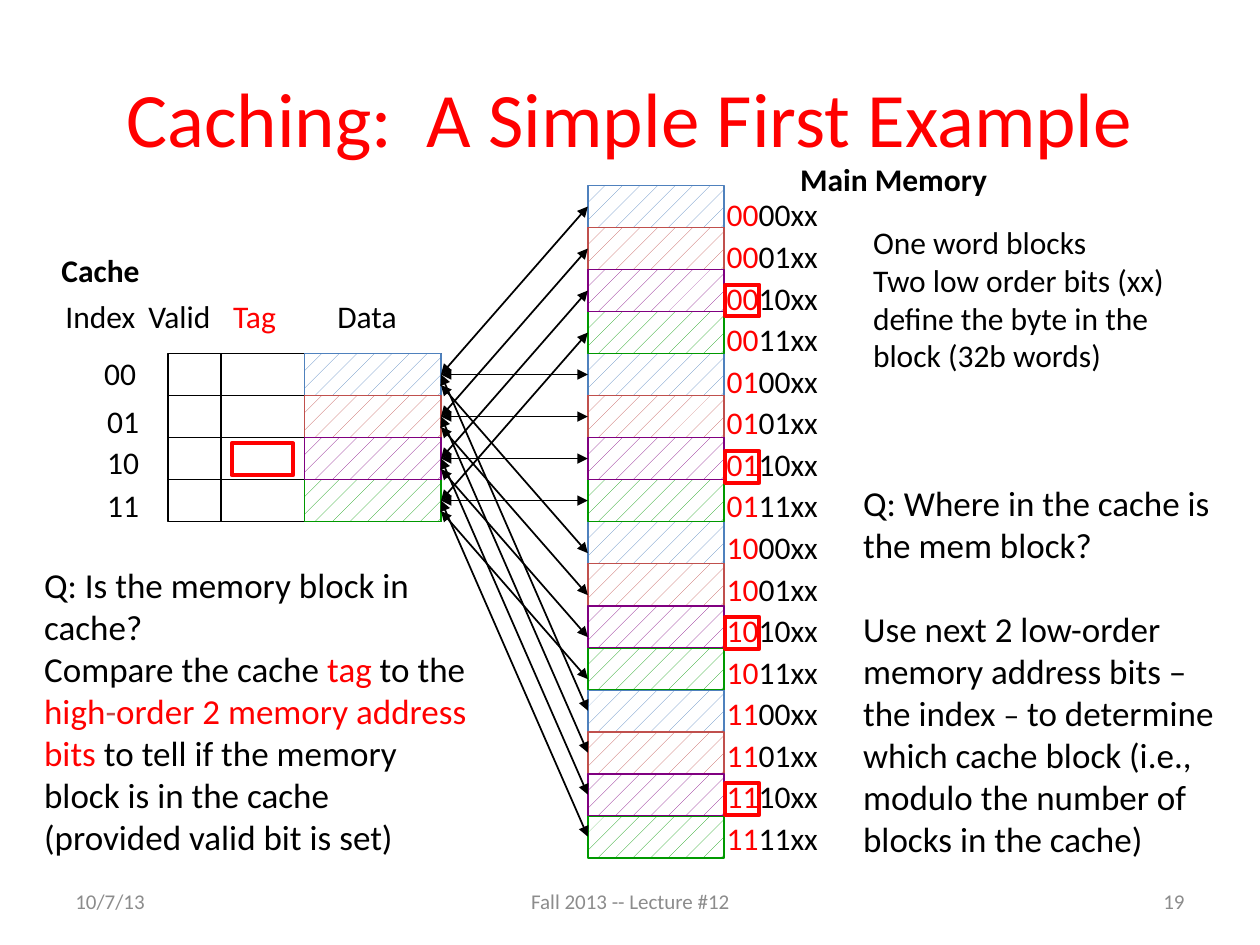
from dataclasses import dataclass
from itertools import product
from typing import Any

from lxml.etree import SubElement
from pptx import Presentation
from pptx.dml.color import RGBColor
from pptx.enum.dml import MSO_PATTERN
from pptx.enum.shapes import MSO_CONNECTOR, MSO_SHAPE
from pptx.enum.text import MSO_ANCHOR, MSO_AUTO_SIZE, PP_ALIGN
from pptx.oxml.ns import qn
from pptx.util import Cm, Pt


@dataclass(frozen=True)
class Theme:
    font: str = "Calibri"
    black: str = "000000"
    white: str = "FFFFFF"
    red: str = "FF0000"
    grey: str = "8C8C8C"
    brick: str = "C0504D"
    blocks: tuple[str, ...] = ("4F81BD", "C0504D", "800080", "009900")
    title: float = 44
    question: float = 20
    label: float = 18
    footer: float = 12
    rule: float = 1
    frame: float = 2.25


THEME = Theme()


@dataclass(frozen=True)
class Span:
    text: str
    color: str = THEME.black
    size: float = THEME.label
    bold: bool = False


@dataclass(frozen=True)
class Label:
    left: float
    top: float
    width: float
    span: Span
    height: float = 1.02


@dataclass(frozen=True)
class Column:
    left: float
    top: float
    width: float
    rows: int

    def row_top(self, row: float) -> float:
        return self.top + row * ROW

    @property
    def right(self) -> float:
        return self.left + self.width


ROW = 13.55 / 16
MEMORY = Column(11.85, 3.74, 2.75, 16)
CACHE_TOP = MEMORY.row_top(4)
VALID = Column(3.39, CACHE_TOP, 1.06, 4)
TAG = Column(4.45, CACHE_TOP, 1.69, 4)
DATA = Column(6.14, CACHE_TOP, 2.75, 4)
BITS = ["".join(pair) for pair in product("01", repeat=2)]


def set_format(target: Any, values: dict[str, Any]) -> None:
    for name, value in values.items():
        setattr(target, name, value)


def write_span(para: Any, span: Span) -> None:
    if span.text == "\n":
        para.add_line_break()
        return
    run = para.add_run()
    run.text = span.text
    set_format(run.font, {"name": THEME.font, "size": Pt(span.size), "bold": span.bold})
    run.font.color.rgb = RGBColor.from_string(span.color)


def add_text(page: Any, place: tuple[float, ...], paragraphs: list[list[Span]],
             para_format: dict[str, Any], frame_format: dict[str, Any]) -> Any:
    box = page.shapes.add_textbox(*map(Cm, place))
    frame = box.text_frame
    set_format(frame, {"word_wrap": True, "auto_size": MSO_AUTO_SIZE.SHAPE_TO_FIT_TEXT, **frame_format})
    for number, spans in enumerate(paragraphs):
        para = frame.add_paragraph() if number else frame.paragraphs[0]
        set_format(para, para_format)
        for span in spans:
            write_span(para, span)
    return box


def add_label(page: Any, label: Label) -> None:
    add_text(page, (label.left, label.top, label.width, label.height), [[label.span]], {}, {"word_wrap": False})


def add_rectangle(page: Any, place: tuple[float, ...], color: str, weight: float) -> Any:
    box = page.shapes.add_shape(MSO_SHAPE.RECTANGLE, *map(Cm, place))
    box.shadow.inherit = False
    box.fill.background()
    box.line.color.rgb = RGBColor.from_string(color)
    box.line.width = Pt(weight)
    return box


def add_line(page: Any, left: float, top: float, right: float, bottom: float) -> Any:
    line = page.shapes.add_connector(MSO_CONNECTOR.STRAIGHT, *map(Cm, (left, top, right, bottom)))
    line.line.color.rgb = RGBColor.from_string(THEME.black)
    line.line.width = Pt(THEME.rule)
    SubElement(line._element.spPr, qn("a:effectLst"))
    return line


def add_arrow(page: Any, left: float, top: float, right: float, bottom: float) -> Any:
    arrow = add_line(page, left, top, right, bottom)
    outline = arrow.line._get_or_add_ln()
    for end in ("a:headEnd", "a:tailEnd"):
        SubElement(outline, qn(end)).set("type", "triangle")
    return arrow


def add_rules(page: Any, column: Column, first: int, last: int) -> None:
    for row in range(first, last):
        add_line(page, column.left, column.row_top(row), column.right, column.row_top(row))


def add_block(page: Any, column: Column, row: int) -> Any:
    color = THEME.blocks[row % 4]
    block = add_rectangle(page, (column.left, column.row_top(row), column.width, ROW), color, THEME.rule)
    block.fill.patterned()
    block.fill.pattern = MSO_PATTERN.PERCENT_5
    block.fill.fore_color.rgb = RGBColor.from_string(color)
    block.fill.back_color.rgb = RGBColor.from_string(THEME.white)
    return block


def add_blocks(page: Any, column: Column) -> dict[int, Any]:
    order = sorted(range(column.rows), key=lambda row: (0, 3, 1, 2).index(row % 4))
    return {row: add_block(page, column, row) for row in order}


def add_grids(page: Any) -> None:
    for column in (DATA, TAG, VALID):
        add_rectangle(page, (column.left, column.top, column.width, column.rows * ROW), THEME.black, THEME.rule)
        add_rules(page, column, 1, column.rows)
    add_rules(page, MEMORY, 0, MEMORY.rows + 1)
    for side in (MEMORY.left, MEMORY.right):
        add_line(page, side, MEMORY.top, side, MEMORY.row_top(MEMORY.rows))


def add_mapping(page: Any, memory_blocks: dict[int, Any], cache_blocks: dict[int, Any]) -> None:
    for row in range(MEMORY.rows):
        shift = 0.75 if row // 4 == 2 else 0.5
        arrow = add_arrow(page, MEMORY.left, MEMORY.row_top(row + shift), DATA.right, DATA.row_top(row % 4 + shift))
        if shift == 0.5:
            arrow.begin_connect(memory_blocks[row], 1)
            arrow.end_connect(cache_blocks[row % 4], 3)


def add_notes_text(page: Any) -> None:
    def ask(text: str, color: str = THEME.black) -> Span:
        return Span(text, color, THEME.question)

    where = add_text(page, (17.15, 9.58, 7.62, 7.95), [
        [ask("Q: Where in the cache is the mem block?")],
        [ask("Use next 2 low-order memory address bits – the index "), Span("–"),
         ask(" to determine which cache block (i.e., modulo the number of blocks in the cache)")],
    ], {}, {})
    where.text_frame.paragraphs[1].space_before = Pt(24)
    add_text(page, (0.64, 11.23, 9.12, 6.25), [
        [ask("Q: Is the memory block in cache?")],
        [ask("Compare the cache "), ask("tag ", THEME.red), ask("to the "), ask("high", THEME.red),
         ask("-", THEME.brick), ask("order 2 memory address bits ", THEME.red),
         ask("to tell if the memory block is in the cache "), ask("\n"), ask("(provided valid bit is set)")],
    ], {}, {})
    add_text(page, (17.35, 4.37, 6.99, 3.33), [
        [Span("One word blocks")],
        [Span("Two low order bits (xx) define the byte in the block (32b words)")],
    ], {}, {})
    addresses = [[Span(tag, THEME.red), Span(f"{index}xx")] for tag, index in product(BITS, BITS)]
    add_text(page, (14.4, 3.74, 2.75, 13.67), addresses, {"line_spacing": 1.1}, {})


def add_labels(page: Any) -> None:
    labels = [
        Label(0.99, 4.93, 2.41, Span("Cache", bold=True)),
        Label(15.88, 3.1, 4.57, Span("Main Memory", bold=True)),
        Label(1.07, 5.87, 2.06, Span("Index")),
        Label(2.74, 5.87, 1.93, Span("Valid")),
        Label(4.45, 5.87, 1.37, Span("Tag", THEME.red)),
        Label(6.55, 5.87, 1.85, Span("Data")),
    ]
    places = ((1.85, 7.01), (1.91, 7.98), (1.91, 8.81), (1.91, 9.68))
    labels += [Label(left, top, 1.22, Span(bits)) for bits, (left, top) in zip(BITS, places)]
    for label in labels:
        add_label(page, label)


def add_footer(page: Any) -> None:
    for left, width, text, align in (
        (1.27, 5.92, "10/7/13", PP_ALIGN.LEFT),
        (18.21, 5.92, "19", PP_ALIGN.RIGHT),
        (8.69, 8.04, "Fall 2013 -- Lecture #12", PP_ALIGN.CENTER),
    ):
        add_text(page, (left, 17.65, width, 1.02), [[Span(text, THEME.grey, THEME.footer)]],
                 {"alignment": align}, {"vertical_anchor": MSO_ANCHOR.MIDDLE, "auto_size": MSO_AUTO_SIZE.NONE})


def add_title(page: Any) -> None:
    title = page.shapes.title
    set_format(title, {"left": Cm(1.27), "top": Cm(0.76), "width": Cm(22.86), "height": Cm(3.18)})
    title.text_frame.vertical_anchor = MSO_ANCHOR.MIDDLE
    para = title.text_frame.paragraphs[0]
    para.alignment = PP_ALIGN.CENTER
    write_span(para, Span("Caching:  A Simple First Example", THEME.red, THEME.title))


def main() -> None:
    deck = Presentation()
    set_format(deck, {"slide_width": Cm(25.4), "slide_height": Cm(19.05)})
    page = deck.slides.add_slide(deck.slide_layouts[5])
    add_title(page)
    add_grids(page)
    add_mapping(page, add_blocks(page, MEMORY), add_blocks(page, DATA))
    add_labels(page)
    add_notes_text(page)
    add_rectangle(page, (4.67, 8.94, 1.24, 0.64), THEME.red, THEME.frame)
    for group in range(4):
        add_rectangle(page, (14.62, 5.74 + group * 3.35, 0.69, 0.64), THEME.red, THEME.frame)
    add_footer(page)
    deck.save("out.pptx")


if __name__ == "__main__":
    main()
